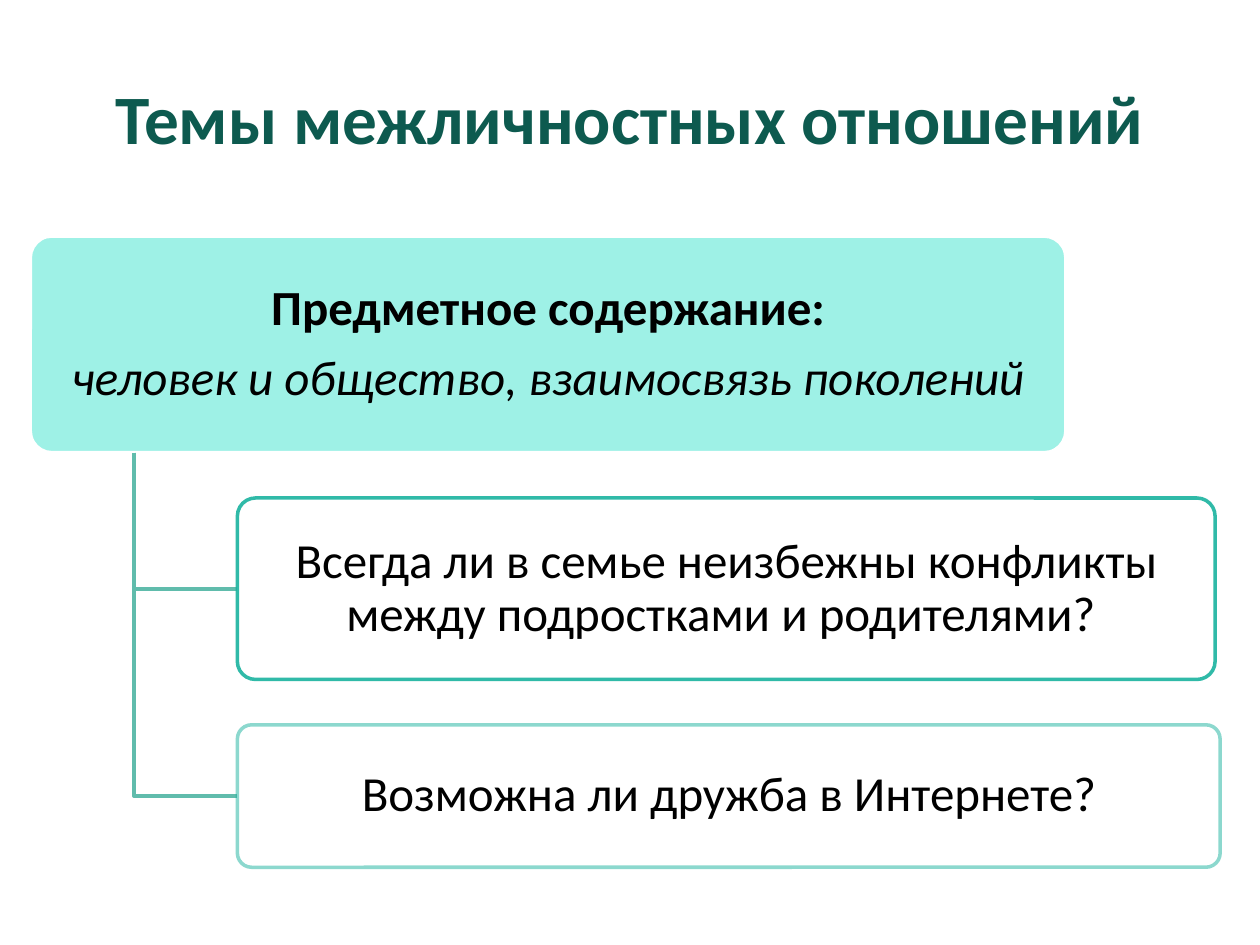
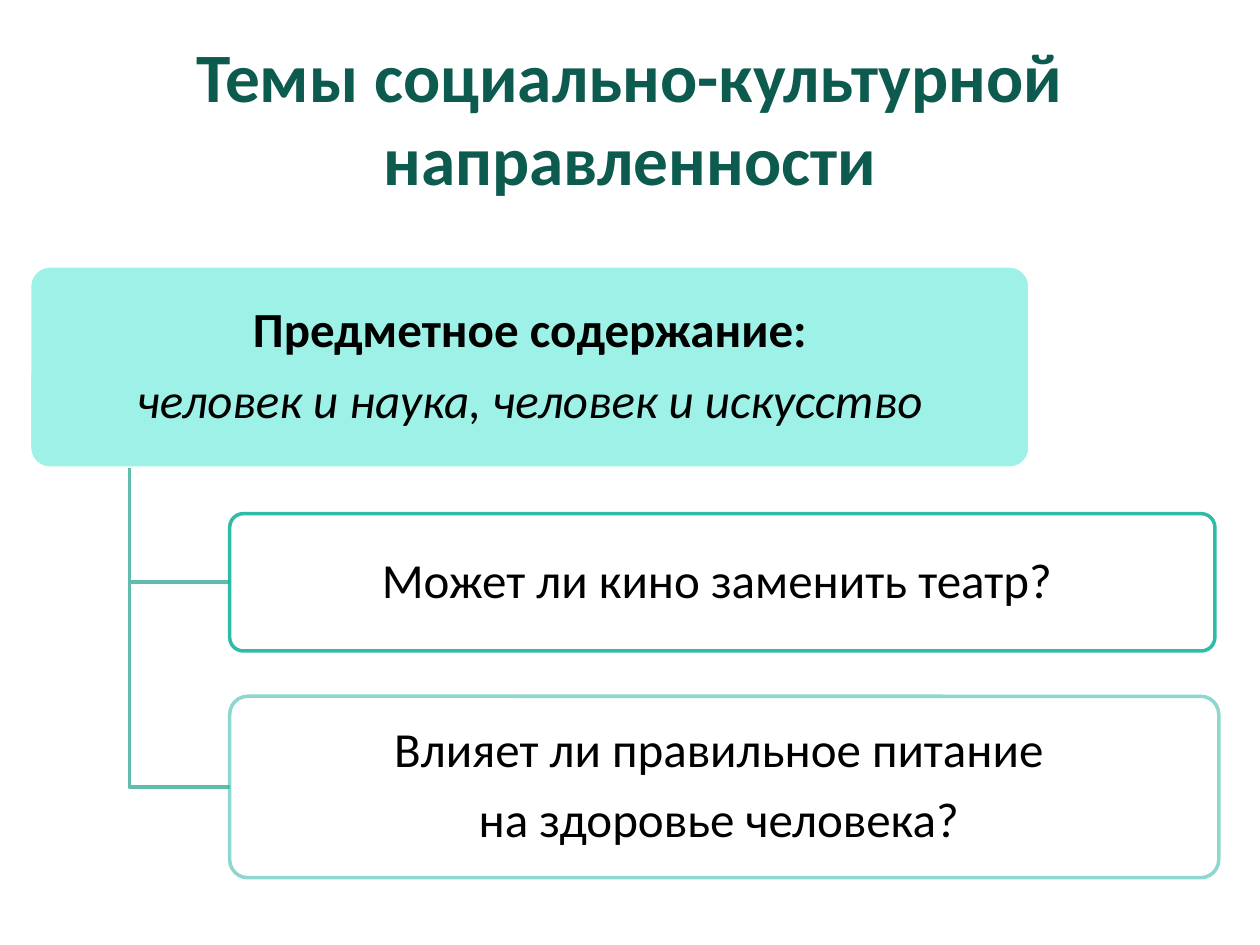
from dataclasses import dataclass

from lxml.etree import SubElement
from pptx import Presentation
from pptx.dml.color import RGBColor as RGB
from pptx.enum.shapes import MSO_SHAPE as SHAPE
from pptx.enum.text import MSO_ANCHOR as ANCHOR, PP_ALIGN as ALIGN
from pptx.oxml.ns import qn
from pptx.util import Pt


@dataclass(frozen=True)
class Theme:
    font: str = "Calibri"
    title: RGB = RGB.from_string("0D5A4F")
    text: RGB = RGB.from_string("000000")
    root: RGB = RGB.from_string("94F0E4")
    paper: RGB = RGB.from_string("FFFFFF")
    outline: RGB = RGB.from_string("1AB39F")
    branch: RGB = RGB.from_string("60BCAC")
    title_size: float = 39.6
    body_size: float = 28
    line: float = 2


T = Theme()
TITLE_BOX = (36, 21.6, 648, 90)
GAP = 25.9                    # between boxes, top to bottom
OUTLINE_ALPHAS = (90, 50)     # the outline fades from topic to topic
TOPIC_STYLE = dict(spacing=0.9, after=9.8, insets=(4.3, 2.9))


def set_alpha(sp, percent, parent="a:solidFill"):
    """Make the fill, or the line if its path is given, partly transparent."""
    color = sp._element.spPr.find(f"{parent}/a:srgbClr", {"a": qn("a:x")[1:-2]})
    SubElement(color, qn("a:alpha")).set("val", str(percent * 1000))


def write(sp, lines, size=T.body_size, color=T.text, spacing=1.0, after=0,
          insets=(7.2, 3.6)):
    """Write (text, bold, italic) lines, centred both ways."""
    tf = sp.text_frame
    tf.word_wrap = True
    tf.vertical_anchor = ANCHOR.MIDDLE
    tf.margin_left = tf.margin_right = Pt(insets[0])
    tf.margin_top = tf.margin_bottom = Pt(insets[1])
    for i, (text, bold, italic) in enumerate(lines):
        p = tf.add_paragraph() if i else tf.paragraphs[0]
        p.alignment = ALIGN.CENTER
        p.line_spacing, p.space_after = spacing, Pt(after)
        r = p.add_run()
        r.text = text
        r.font.name, r.font.size = T.font, Pt(size)
        r.font.bold, r.font.italic = bold, italic
        r.font.color.rgb = color


def add_box(slide, box, lines, fill, line, line_alpha=100):
    sp = slide.shapes.add_shape(SHAPE.ROUNDED_RECTANGLE, *map(Pt, box))
    sp.adjustments[0] = 0.1
    sp.shadow.inherit = False
    sp.fill.solid()
    sp.fill.fore_color.rgb = fill
    set_alpha(sp, 90)
    sp.line.color.rgb = line
    sp.line.width = Pt(T.line)
    set_alpha(sp, line_alpha, "a:ln/a:solidFill")
    write(sp, lines, **TOPIC_STYLE)


def add_branch(slide, x, y, end_x, end_y):
    """Elbow line: down, then right."""
    builder = slide.shapes.build_freeform(Pt(x), Pt(y))
    builder.add_line_segments(
        [(Pt(x), Pt(end_y)), (Pt(end_x), Pt(end_y))], close=False)
    sp = builder.convert_to_shape()
    sp.shadow.inherit = False
    sp.fill.background()
    sp.line.color.rgb = T.branch
    sp.line.width = Pt(T.line)


def add_title(slide, box, text):
    sp = slide.shapes.add_textbox(*map(Pt, box))
    write(sp, [(text, True, False)], size=T.title_size, color=T.title)


def add_tree(slide, box, subject, topics):
    """Subject box with topics hanging below it, indented by its width."""
    left, top, width, height = box
    trunk_x, topic_x = left + 0.1 * width, left + 0.2 * width
    bottom = top + height
    add_box(slide, box, [("Предметное содержание:", True, False),
                         (subject, False, True)], T.root, T.paper)
    y = bottom + GAP
    for (w, h, lines), alpha in zip(topics, OUTLINE_ALPHAS):
        add_branch(slide, trunk_x, bottom, topic_x, y + h / 2)
        add_box(slide, (topic_x, y, w, h), [(s, False, False) for s in lines],
                T.paper, T.outline, alpha)
        y += h + GAP


def add_topic_slide(prs, title, tree_box, subject, topics):
    slide = prs.slides.add_slide(prs.slide_layouts[6])
    add_title(slide, TITLE_BOX, title)
    add_tree(slide, tree_box, subject, topics)


def main():
    prs = Presentation()
    prs.slide_width, prs.slide_height = Pt(720), Pt(540)

    # Relationships between people
    add_topic_slide(
        prs, "Темы межличностных отношений", (17.3, 134.9, 591.8, 123.8),
        "человек и общество, взаимосвязь поколений",
        [(558.7, 103.7, ["Всегда ли в семье неизбежны конфликты "
                         "между подростками и родителями? "]),
         (561.6, 81.4, ["Возможна ли дружба в Интернете?"])])

    # Society and culture
    add_topic_slide(
        prs, "Темы социально-культурной направленности",
        (16.9, 152, 571.7, 115.6), "человек и наука, человек и искусство",
        [(563, 78.5, ["Может ли кино заменить театр? "]),
         (565.2, 103.7, ["Влияет ли правильное питание ",
                         "на здоровье человека? "])])

    prs.save("out.pptx")


if __name__ == "__main__":
    main()
